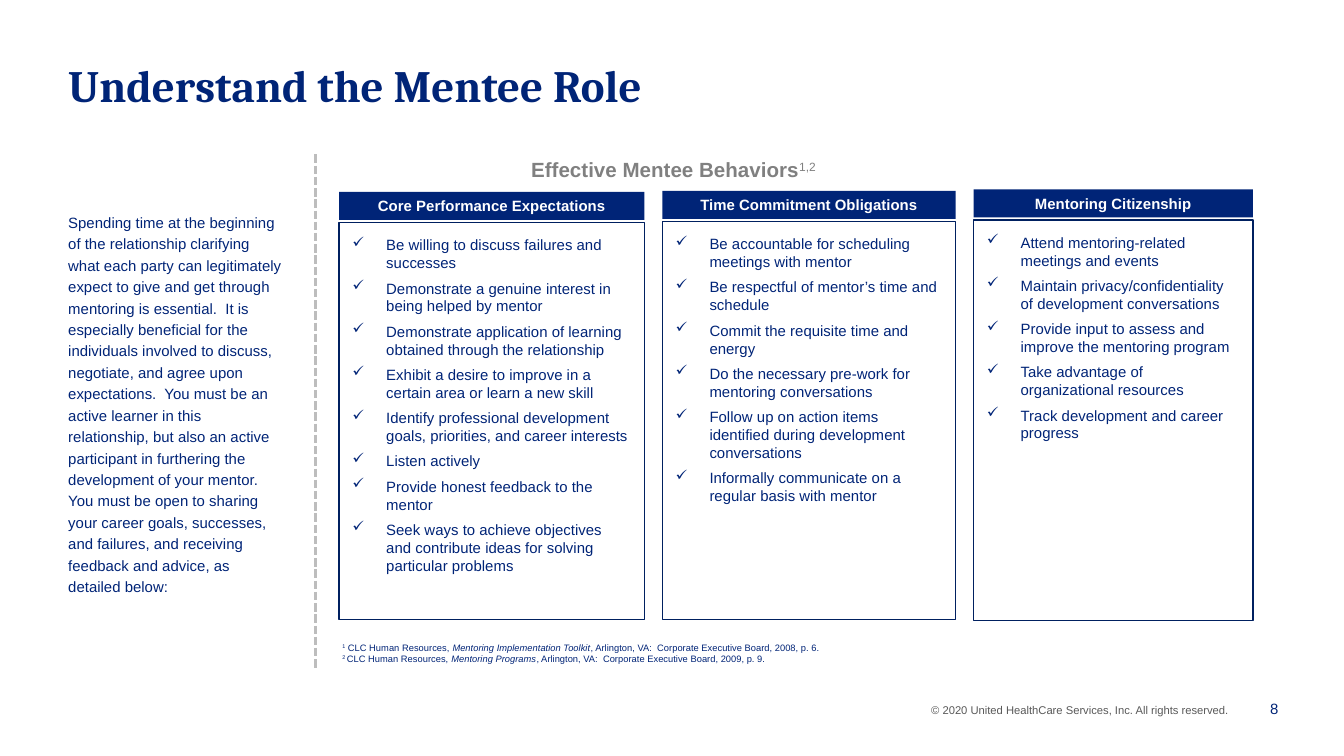
from dataclasses import dataclass

from lxml import etree
from pptx import Presentation
from pptx.dml.color import RGBColor
from pptx.enum.dml import MSO_LINE
from pptx.enum.shapes import MSO_CONNECTOR, MSO_SHAPE
from pptx.enum.text import MSO_ANCHOR, PP_ALIGN
from pptx.oxml.ns import qn
from pptx.util import Cm, Pt

RECT = MSO_SHAPE.RECTANGLE
STRAIGHT = MSO_CONNECTOR.STRAIGHT
DASH = MSO_LINE.SQUARE_DOT
TOP, MIDDLE = MSO_ANCHOR.TOP, MSO_ANCHOR.MIDDLE
LEFT, CENTER, RIGHT = PP_ALIGN.LEFT, PP_ALIGN.CENTER, PP_ALIGN.RIGHT


@dataclass(frozen=True)
class Theme:
    navy: RGBColor = RGBColor(0x00, 0x24, 0x77)
    border: RGBColor = RGBColor(0x00, 0x20, 0x60)
    heading: RGBColor = RGBColor(0x80, 0x80, 0x80)
    footer: RGBColor = RGBColor(0x59, 0x59, 0x59)
    divider: RGBColor = RGBColor(0xBD, 0xBD, 0xBD)
    white: RGBColor = RGBColor(0xFF, 0xFF, 0xFF)
    title_font: str = "Cambria"
    body_font: str = "Arial"
    title_size: Pt = Pt(24)
    heading_size: Pt = Pt(11)
    body_size: Pt = Pt(8)
    footer_size: Pt = Pt(6)
    note_size: Pt = Pt(5)


THEME = Theme()
BODY = {"name": THEME.body_font, "size": THEME.body_size, "bold": False}
INSETS = (0.25, 0.13, 0.25, 0.13)
FLAT_INSETS = (0.25, 0, 0.25, 0)
COLUMN_GAP = 0.34

INTRO = (
    "Spending time at the beginning of the relationship clarifying what each party can "
    "legitimately expect to give and get through mentoring is essential.  It is especially "
    "beneficial for the individuals involved to discuss, negotiate, and agree upon "
    "expectations.  You must be an active learner in this relationship, but also an active "
    "participant in furthering the development of your mentor.  You must be open to sharing "
    "your career goals, successes, and failures, and receiving feedback and advice, as "
    "detailed below:"
)
# Each column: title, top, width, height, behaviors
COLUMNS = [
    ("Core Performance Expectations", 3.63, 5.77, 8.08, [
        "Be willing to discuss failures and successes",
        "Demonstrate a genuine interest in being helped by mentor",
        "Demonstrate application of learning obtained through the relationship",
        "Exhibit a desire to improve in a certain area or learn a new skill",
        "Identify professional development goals, priorities, and career interests",
        "Listen actively",
        "Provide honest feedback to the mentor",
        "Seek ways to achieve objectives and contribute ideas for solving particular problems",
    ]),
    ("Time Commitment Obligations", 3.61, 5.54, 8.1, [
        "Be accountable for scheduling meetings with mentor",
        "Be respectful of mentor’s time and schedule",
        "Commit the requisite time and energy",
        "Do the necessary pre-work for mentoring conversations",
        "Follow up on action items identified during development conversations",
        "Informally communicate on a regular basis with mentor",
    ]),
    ("Mentoring Citizenship", 3.58, 5.28, 8.15, [
        "Attend mentoring-related meetings and events",
        "Maintain privacy/confidentiality of development conversations",
        "Provide input to assess and improve the mentoring program",
        "Take advantage of organizational resources",
        "Track development and career progress",
    ]),
]
SOURCES = [
    ("1", " CLC Human Resources, ", "Mentoring Implementation Toolkit",
     ", Arlington, VA:  Corporate Executive Board, 2008, p. 6."),
    ("2 ", "CLC Human Resources, ", "Mentoring Programs",
     ", Arlington, VA:  Corporate Executive Board, 2009, p. 9."),
]


def set_frame(sp, insets=INSETS, anchor=TOP):
    tf = sp.text_frame
    tf.word_wrap = True
    tf.vertical_anchor = anchor
    sides = ("left", "top", "right", "bottom")
    for side, inset in zip(sides, insets):
        setattr(tf, f"margin_{side}", Cm(inset))
    return tf


def add_run(p, text, color, superscript=False, **formats):
    r = p.add_run()
    r.text = text
    for name, value in {**BODY, **formats}.items():
        setattr(r.font, name, value)
    r.font.color.rgb = color
    if superscript:
        r._r.get_or_add_rPr().set("baseline", "30000")


def add_text(s, box, text, color, insets=INSETS, anchor=TOP, align=LEFT, **formats):
    """Adds a text box with one run and returns its paragraph."""
    sp = s.shapes.add_textbox(*map(Cm, box))
    p = set_frame(sp, insets, anchor).paragraphs[0]
    p.alignment = align
    add_run(p, text, color, **formats)
    return p


def add_rect(s, box):
    sp = s.shapes.add_shape(RECT, *map(Cm, box))
    sp.shadow.inherit = False
    return sp


def add_check(p):
    """Gives the paragraph a hanging check mark."""
    pPr = p._p.get_or_add_pPr()
    pPr.set("marL", str(Cm(0.64)))
    pPr.set("indent", str(-Cm(0.64)))
    etree.SubElement(pPr, qn("a:buChar")).set("char", "✓")


def add_intro(s, box):
    p = add_text(s, box, INTRO, THEME.navy)
    p.line_spacing = 1.2


def add_divider(s, x, top, bottom):
    line = s.shapes.add_connector(STRAIGHT, Cm(x), Cm(top), Cm(x), Cm(bottom))
    line.line.color.rgb = THEME.divider
    line.line.width = Pt(1.5)
    line.line.dash_style = DASH
    etree.SubElement(line._element.spPr, qn("a:effectLst"))


def add_column(s, box, title, behaviors):
    left, top, width, height = box
    header = add_rect(s, (left, top, width, 0.53))
    header.fill.solid()
    header.fill.fore_color.rgb = THEME.navy
    header.line.fill.background()
    p = set_frame(header, FLAT_INSETS, MIDDLE).paragraphs[0]
    p.alignment = CENTER
    add_run(p, title, THEME.white, bold=True)

    panel = add_rect(s, (left, top + 0.58, width, height - 0.58))
    panel.fill.background()
    panel.line.color.rgb = THEME.border
    panel.line.width = Pt(0.75)
    tf = set_frame(panel, (0.25,) * 4)
    for i, behavior in enumerate(behaviors):
        p = tf.add_paragraph() if i else tf.paragraphs[0]
        p.alignment = LEFT
        p.space_before = Pt(4 if i else 0)
        add_check(p)
        add_run(p, behavior, THEME.navy)


def add_behaviors(s, left):
    p = add_text(s, (9.25, 2.97, 10.16, 0.48), "Effective Mentee Behaviors", THEME.heading,
                 (0.79, 0, 0.56, 0), size=THEME.heading_size, bold=True)
    add_run(p, "1,2", THEME.heading, superscript=True, size=THEME.heading_size)
    for title, top, width, height, behaviors in COLUMNS:
        add_column(s, (left, top, width, height), title, behaviors)
        left += width + COLUMN_GAP


def add_sources(s, box):
    tf = set_frame(s.shapes.add_textbox(*map(Cm, box)), FLAT_INSETS)
    for i, (mark, author, work, details) in enumerate(SOURCES):
        p = tf.add_paragraph() if i else tf.paragraphs[0]
        add_run(p, mark, THEME.navy, superscript=True, size=THEME.note_size)
        for text, italic in ((author, False), (work, True), (details, False)):
            add_run(p, text, THEME.navy, size=THEME.note_size, italic=italic)


def add_footer(s):
    add_text(s, (17.35, 13.16, 6.55, 0.51),
             "© 2020 United HealthCare Services, Inc. All rights reserved.",
             THEME.footer, size=THEME.footer_size)
    add_text(s, (23.42, 13, 0.99, 0.79), "8", THEME.navy, anchor=MIDDLE, align=RIGHT)


def main():
    prs = Presentation()
    prs.slide_width, prs.slide_height = Cm(25.4), Cm(14.29)
    s = prs.slides.add_slide(prs.slide_layouts[6])
    add_text(s, (1.04, 0.97, 23.11, 1.52), "Understand the Mentee Role", THEME.navy,
             name=THEME.title_font, size=THEME.title_size, bold=True)
    add_intro(s, (1.04, 3.84, 4.6, 9.42))
    add_divider(s, 5.97, 2.92, 12.67)
    add_behaviors(s, 6.41)
    add_sources(s, (6.22, 12.14, 12.73, 0.43))
    add_footer(s)
    prs.save("out.pptx")


if __name__ == "__main__":
    main()
